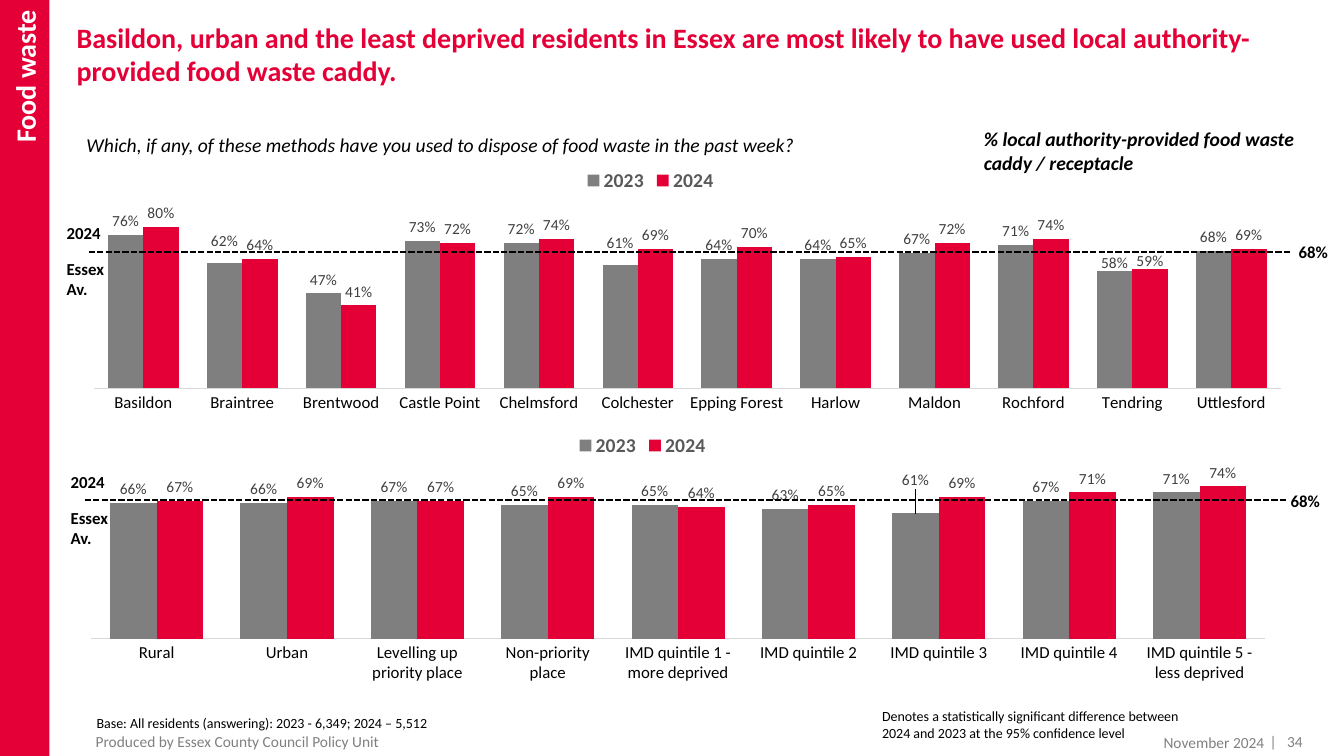
import dataclasses
import typing

import lxml.etree
import pptx
import pptx.chart.data
import pptx.dml.color
import pptx.enum.chart
import pptx.enum.dml
import pptx.enum.shapes
import pptx.enum.text
import pptx.oxml
import pptx.oxml.ns
import pptx.util

Inches = pptx.util.Inches
Pt = pptx.util.Pt
RGBColor = pptx.dml.color.RGBColor
qn = pptx.oxml.ns.qn
ALIGN = pptx.enum.text.PP_ALIGN
ANCHOR = pptx.enum.text.MSO_ANCHOR

FONT = "Calibri"
RED = RGBColor(0xE4, 0x00, 0x37)
GREEN = RGBColor(0x2F, 0x7D, 0x66)
GREY = RGBColor(0x7F, 0x7F, 0x7F)
FOOTER = RGBColor(0x80, 0x80, 0x80)
LABEL = RGBColor(0x40, 0x40, 0x40)
LEGEND = RGBColor(0x59, 0x59, 0x59)
AXIS = RGBColor(0xD9, 0xD9, 0xD9)
BLACK = RGBColor(0, 0, 0)
WHITE = RGBColor(0xFF, 0xFF, 0xFF)

Box = tuple[float, float, float, float]


@dataclasses.dataclass
class Text:
    box: Box
    paras: list[str]
    size: float
    color: RGBColor = BLACK
    bold: bool = False
    italic: bool = False
    inset: bool = True
    after: float = 0
    align: typing.Any = ALIGN.LEFT


@dataclasses.dataclass
class Panel:
    box: Box
    cats: list[str]
    v2023: list[int]
    v2024: list[int]
    rises: list[int]
    falls: list[int]
    shifts: dict[tuple[int, int], float]
    plot_height: float
    legend_y: float
    line_x: float
    line_y: float
    average: Box
    value: Box


PANELS = [
    Panel((0.56, 1.55, 12.39, 2.71),
          ["Basildon", "Braintree", "Brentwood", "Castle Point", "Chelmsford", "Colchester",
           "Epping Forest", "Harlow", "Maldon", "Rochford", "Tendring", "Uttlesford"],
          [76, 62, 47, 73, 72, 61, 64, 64, 67, 71, 58, 68],
          [80, 64, 41, 72, 74, 69, 70, 65, 72, 74, 59, 69],
          [0, 5, 6, 8], [2, 3, 10, 11],
          {(0, 1): -0.03, (0, 5): -0.03, (0, 10): 0.02, (1, 10): 0.02},
          0.74, 0.03, 0.88, 2.5, (0.66, 2.21, 0.58, 0.47), (12.88, 2.4, 0.53, 0.43)),
    Panel((0.54, 3.94, 12.25, 3.2),
          ["Rural", "Urban", "Levelling up priority place", "Non-priority place",
           "IMD quintile 1 - more deprived", "IMD quintile 2", "IMD quintile 3",
           "IMD quintile 4", "IMD quintile 5 - less deprived"],
          [66, 66, 67, 65, 65, 63, 61, 67, 71],
          [67, 69, 67, 69, 64, 65, 69, 71, 74],
          [1, 3, 6, 7, 8], [0, 2, 5],
          {(0, 6): -0.06},
          0.64, 0.1, 0.84, 4.96, (0.7, 4.68, 0.58, 0.47), (12.8, 4.87, 0.53, 0.43)),
]

TEXTS = [
    Text((0.86, 7.04, 6.13, 0.27),
         ["Base: All residents (answering): 2023 - 6,349; 2024 – 5,512"], 10),
    Text((0.85, 7.21, 6.45, 0.15), ["Produced by Essex County Council Policy Unit"], 11, FOOTER),
    Text((9.66, 1.21, 3.56, 0.57),
         ["% local authority-provided food waste caddy / receptacle"], 14, bold=True, italic=True),
    Text((8.65, 6.97, 3.27, 0.44),
         ["Denotes a statistically significant difference between 2024 and 2023 "
          "at the 95% confidence level"], 10),
    Text((0.76, 1.27, 12.07, 0.34),
         ["Which, if any, of these methods have you used to dispose of food waste in the past week?"],
         14, italic=True),
    Text((10.24, 7.22, 2.4, 0.15), ["November 2024"], 11, FOOTER, align=ALIGN.RIGHT),
]


def set_font(font, size: float, color: RGBColor, bold: bool = False, italic: bool = False) -> None:
    font.name, font.size, font.bold, font.italic = FONT, Pt(size), bold, italic
    font.color.rgb = color


def fill_text(tf, t: Text) -> None:
    tf.word_wrap = True
    tf.auto_size = pptx.enum.text.MSO_AUTO_SIZE.NONE
    tf.vertical_anchor = ANCHOR.TOP
    if not t.inset:
        tf.margin_left = tf.margin_right = tf.margin_top = tf.margin_bottom = 0
    for i, text in enumerate(t.paras):
        p = tf.add_paragraph() if i else tf.paragraphs[0]
        p.alignment = t.align
        p.space_after = Pt(t.after)
        r = p.add_run()
        r.text = text
        set_font(r.font, t.size, t.color, t.bold, t.italic)


def add_text(s, t: Text):
    sp = s.shapes.add_textbox(*map(Inches, t.box))
    fill_text(sp.text_frame, t)
    return sp


def chart_xml(body: str):
    ns = pptx.oxml.ns.nsdecls("c", "a")
    root = lxml.etree.fromstring(f"<c:root {ns}>{body}</c:root>")
    return pptx.oxml.parse_xml(lxml.etree.tostring(root[0]))


def layout(**values: float):
    modes = '<c:xMode val="edge"/><c:yMode val="edge"/>' if "x" in values else ""
    target = '<c:layoutTarget val="inner"/>' if "w" in values else ""
    nums = "".join(f'<c:{k} val="{v}"/>' for k, v in values.items())
    return chart_xml(f"<c:layout><c:manualLayout>{target}{modes}{nums}</c:manualLayout></c:layout>")


def replace_layout(parent, new, index: int) -> None:
    old = parent.find(qn("c:layout"))
    if old is not None:
        parent.remove(old)
    parent.insert(index, new)


def style_label(ser, i: int, shift: float, border: typing.Optional[RGBColor]) -> None:
    label = ser.points[i].data_label
    set_font(label.font, 11, LABEL)
    label.position = pptx.enum.chart.XL_LABEL_POSITION.OUTSIDE_END
    idx = ser._element.find(f"{qn('c:dLbls')}/{qn('c:dLbl')}/{qn('c:idx')}[@val='{i}']")
    if border is not None:
        idx.addnext(chart_xml(f'<c:spPr><a:noFill/><a:ln w="19050"><a:solidFill>'
                              f'<a:srgbClr val="{border}"/></a:solidFill></a:ln></c:spPr>'))
    idx.addnext(chart_xml('<c:numFmt formatCode="0%" sourceLinked="0"/>'))
    if shift:
        idx.addnext(chart_xml(f'<c:layout><c:manualLayout><c:x val="0"/>'
                              f'<c:y val="{shift}"/></c:manualLayout></c:layout>'))


def add_panel_chart(s, panel: Panel) -> None:
    data = pptx.chart.data.CategoryChartData(number_format="0%")
    data.categories = panel.cats
    data.add_series("2023", [v / 100 for v in panel.v2023])
    data.add_series("2024", [v / 100 for v in panel.v2024])
    ch = s.shapes.add_chart(pptx.enum.chart.XL_CHART_TYPE.COLUMN_CLUSTERED,
                            *map(Inches, panel.box), data).chart
    set_font(ch.font, 10, BLACK)
    ch.has_title = False
    ch.has_legend = True
    ch.legend.position = pptx.enum.chart.XL_LEGEND_POSITION.TOP
    ch.legend.include_in_layout = False
    set_font(ch.legend.font, 14, LEGEND, bold=True)
    replace_layout(ch.legend._element, layout(x=0.42, y=panel.legend_y), 1)

    va, ca = ch.value_axis, ch.category_axis
    va.minimum_scale, va.maximum_scale, va.major_unit = 0, 1, 0.2
    va.has_major_gridlines = va.visible = False
    ca.major_tick_mark = pptx.enum.chart.XL_TICK_MARK.NONE
    ca.format.line.color.rgb = AXIS
    ca.format.line.width = Pt(0.75)
    set_font(ca.tick_labels.font, 12, BLACK)

    plot = ch.plots[0]
    plot.gap_width, plot.overlap, plot.vary_by_categories = 80, 0, False
    area = ca._element.getparent()
    replace_layout(area, layout(x=0.03, y=0.11, w=0.95, h=panel.plot_height), 0)
    borders = {i: GREEN for i in panel.rises} | {i: RED for i in panel.falls}
    for n, (ser, color) in enumerate(zip(plot.series, (GREY, RED))):
        ser.format.fill.solid()
        ser.format.fill.fore_color.rgb = color
        dl = ser.data_labels
        dl.show_value = True
        dl.number_format, dl.number_format_is_linked = "0%", False
        dl.position = pptx.enum.chart.XL_LABEL_POSITION.OUTSIDE_END
        set_font(dl.font, 11, LABEL)
        for i in range(len(panel.cats)):
            border = borders.get(i) if n else None
            shift = panel.shifts.get((n, i), 0)
            if border is not None or shift:
                style_label(ser, i, shift, border)


def add_average(s, panel: Panel) -> None:
    x, y = panel.line_x, panel.line_y
    cn = s.shapes.add_connector(pptx.enum.shapes.MSO_CONNECTOR.STRAIGHT,
                                Inches(x), Inches(y), Inches(x + 11.93), Inches(y))
    cn.line.color.rgb = BLACK
    cn.line.width = Pt(1.5)
    cn.line.dash_style = pptx.enum.dml.MSO_LINE.SQUARE_DOT
    lxml.etree.SubElement(cn._element.spPr, qn("a:effectLst"))
    for box, paras in ((panel.average, ["2024", "Essex Av."]), (panel.value, ["68%"])):
        add_text(s, Text(box, paras, 12, bold=True, inset=False, after=11.3))


def add_band(s) -> None:
    sp = s.shapes.add_shape(pptx.enum.shapes.MSO_SHAPE.RECTANGLE, 0, 0, Inches(0.49), Inches(7.5))
    sp.shadow.inherit = False
    sp.fill.solid()
    sp.fill.fore_color.rgb = RED
    sp.line.fill.background()
    tf = sp.text_frame
    fill_text(tf, Text((0, 0, 0.49, 7.5), ["Food waste"], 20, WHITE, bold=True, align=ALIGN.RIGHT))
    tf.vertical_anchor = ANCHOR.MIDDLE
    tf.margin_left = tf.margin_right = tf.margin_top = Inches(0.1)
    tf._txBody.bodyPr.set("vert", "vert270")


def add_page_number(s) -> None:
    sp = add_text(s, Text((12.17, 7.21, 0.85, 0.15), ["|", " 34"][:1], 11, FOOTER,
                          align=ALIGN.RIGHT))
    p = sp.text_frame.paragraphs[0]
    p.runs[0].font._element.set("spc", "500")
    r = p.add_run()
    r.text = " 34"
    set_font(r.font, 11, FOOTER)


def main() -> None:
    prs = pptx.Presentation()
    prs.slide_width, prs.slide_height = Inches(13.33), Inches(7.5)
    s = prs.slides.add_slide(prs.slide_layouts[5])
    title = s.shapes.title
    box = (0.76, 0.2, 12.39, 1.08)
    title.left, title.top, title.width, title.height = map(Inches, box)
    fill_text(title.text_frame, Text(
        box, ["Basildon, urban and the least deprived residents in Essex are most likely to have "
              "used local authority-provided food waste caddy."], 20, RED, bold=True, inset=False))
    for panel in PANELS:
        add_panel_chart(s, panel)
    add_band(s)
    for t in TEXTS:
        add_text(s, t)
    for panel in PANELS:
        add_average(s, panel)
    add_page_number(s)
    prs.save("out.pptx")


if __name__ == "__main__":
    main()
